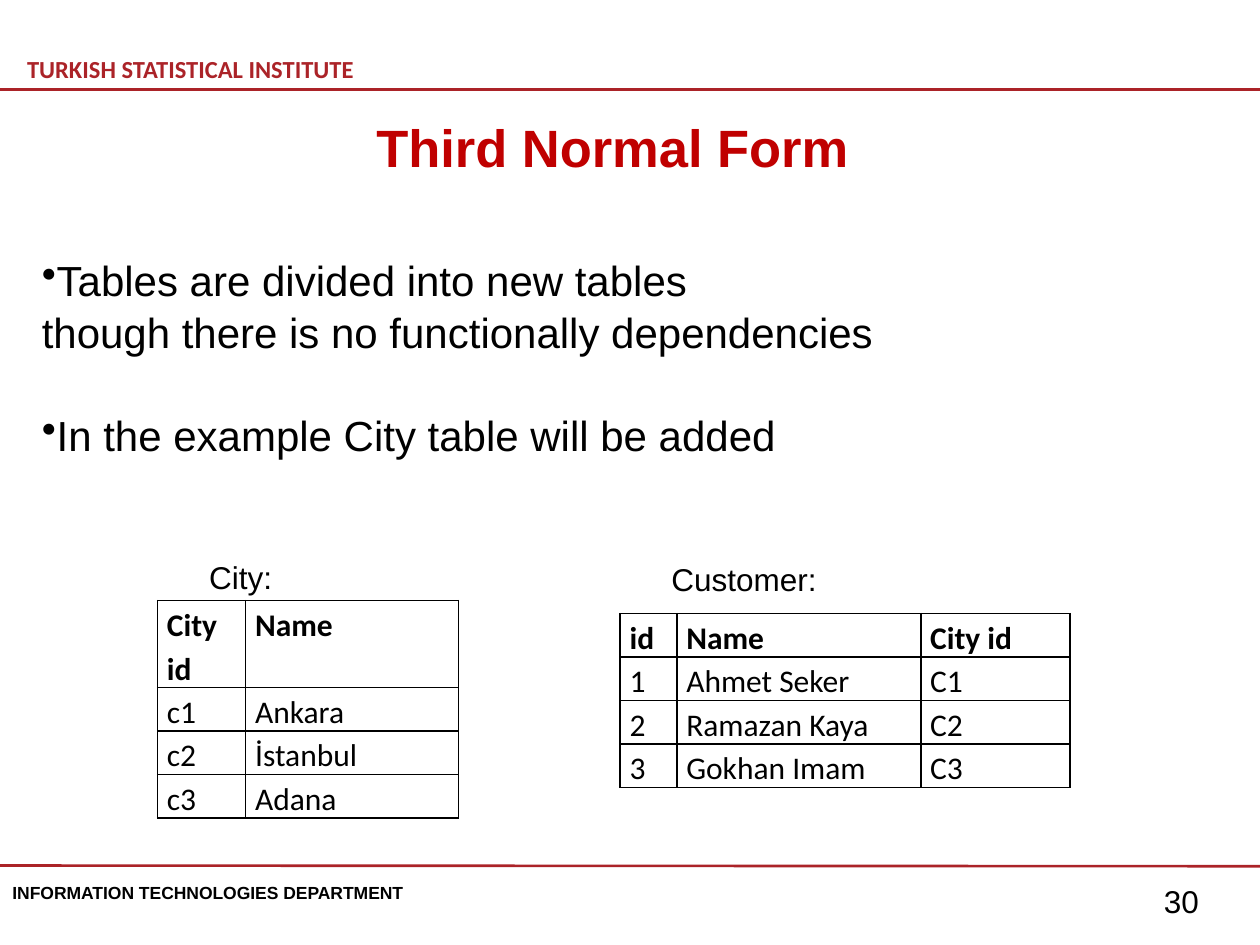
import dataclasses

import pptx
import pptx.dml.color
import pptx.enum.shapes
import pptx.enum.text
import pptx.oxml
import pptx.oxml.ns
import pptx.util

Pt = pptx.util.Pt


@dataclasses.dataclass(frozen=True)
class Theme:
    black: str = "000000"
    header_red: str = "AB2328"
    title_red: str = "C00000"
    body_font: str = "Arial"
    table_font: str = "Calibri"
    title_size: float = 30
    body_size: float = 24
    label_size: float = 18
    header_size: float = 14
    footer_size: float = 10
    rule_width: float = 1.5
    border_width: float = 1
    row_height: float = 24.8


class SlideBuilder:
    """Draw text, rules and tables on one slide in a shared theme."""

    def __init__(self, slide, theme):
        self.slide = slide
        self.theme = theme

    def add_run(self, paragraph, text, size, color=None, font=None, bold=False):
        run = paragraph.add_run()
        run.text = text
        run.font.size = Pt(size)
        run.font.name = font or self.theme.body_font
        run.font.bold = bold
        run.font.color.rgb = pptx.dml.color.RGBColor.from_string(color or self.theme.black)

    def add_frame(self, left, top, width, height, wrap):
        box = self.slide.shapes.add_textbox(Pt(left), Pt(top), Pt(width), Pt(height))
        box.text_frame.word_wrap = wrap
        return box.text_frame

    def add_text(self, position, text, size, top_inset=3.6, **style):
        frame = self.add_frame(*position, wrap=False)
        frame.margin_top = Pt(top_inset)
        self.add_run(frame.paragraphs[0], text, size, **style)

    def add_bullets(self, position, items):
        frame = self.add_frame(*position, wrap=True)
        line_height = 1.04
        paragraph = frame.paragraphs[0]
        for item_index, lines in enumerate(items):
            for line_index, line in enumerate(lines):
                if item_index or line_index:
                    paragraph = frame.add_paragraph()
                if line_index == 0:
                    properties = paragraph._p.get_or_add_pPr()
                    bullet = pptx.oxml.parse_xml(
                        f'<a:buChar {pptx.oxml.ns.nsdecls("a")} char="•"/>')
                    properties.append(bullet)
                    if item_index:
                        paragraph.space_before = Pt(28.7)
                paragraph.line_spacing = line_height
                self.add_run(paragraph, line, self.theme.body_size)

    def add_rule(self, start_y, end_y):
        rule = self.slide.shapes.add_connector(
            pptx.enum.shapes.MSO_CONNECTOR.STRAIGHT, Pt(0), Pt(start_y), Pt(720), Pt(end_y))
        rule.line.width = Pt(self.theme.rule_width)
        rule.line.color.rgb = pptx.dml.color.RGBColor.from_string(self.theme.header_red)
        rule._element.spPr.append(
            pptx.oxml.parse_xml(f'<a:effectLst {pptx.oxml.ns.nsdecls("a")}/>'))

    def add_borders(self, cell):
        properties = cell._tc.get_or_add_tcPr()
        for index, side in enumerate("LRTB"):
            border = pptx.oxml.parse_xml(
                f'<a:ln{side} {pptx.oxml.ns.nsdecls("a")} w="{Pt(self.theme.border_width)}">'
                f'<a:solidFill><a:srgbClr val="{self.theme.black}"/></a:solidFill></a:ln{side}>')
            properties.insert(index, border)

    def add_table(self, left, top, widths, rows, header_lines=1):
        heights = [self.theme.row_height * (header_lines if index == 0 else 1)
                   for index in range(len(rows))]
        table = self.slide.shapes.add_table(
            len(rows), len(widths), Pt(left), Pt(top), Pt(sum(widths)), Pt(sum(heights))).table
        table.first_row = False
        table.horz_banding = False
        for column, width in zip(table.columns, widths):
            column.width = Pt(width)
        for row_index, values in enumerate(rows):
            table.rows[row_index].height = Pt(heights[row_index])
            for column_index, value in enumerate(values):
                cell = table.cell(row_index, column_index)
                cell.margin_left = cell.margin_right = Pt(5.4)
                cell.margin_top = cell.margin_bottom = Pt(0)
                cell.fill.background()
                self.add_borders(cell)
                paragraph = cell.text_frame.paragraphs[0]
                paragraph.line_spacing = 1.15
                self.add_run(paragraph, value, self.theme.label_size,
                             font=self.theme.table_font, bold=row_index == 0)


def main():
    theme = Theme()
    presentation = pptx.Presentation()
    presentation.slide_width = Pt(720)
    presentation.slide_height = Pt(540)
    slide = presentation.slides.add_slide(presentation.slide_layouts[6])
    builder = SlideBuilder(slide, theme)

    builder.add_text((8.4, 13.7, 255, 28), "TURKISH STATISTICAL INSTITUTE", theme.header_size,
                     top_inset=17.3, color=theme.header_red, font=theme.table_font, bold=True)
    builder.add_rule(51, 51)
    builder.add_rule(494.6, 495)
    builder.add_text((0, 500.4, 242, 19.4), "INFORMATION TECHNOLOGIES DEPARTMENT",
                     theme.footer_size, bold=True)
    builder.add_text((658, 500.4, 50, 29), "30", theme.label_size)
    builder.add_text((208, 62, 287, 44), "Third Normal Form", theme.title_size,
                     color=theme.title_red, bold=True)
    builder.add_bullets((16.8, 140.6, 648, 152), [
        ["Tables are divided into new tables", "though there is no functionally dependencies"],
        ["In the example City table will be added"],
    ])
    builder.add_table(90, 343.2, [50.4, 121.6], [
        ["City id", "Name"],
        ["c1", "Ankara"],
        ["c2", "İstanbul"],
        ["c3", "Adana"],
    ], header_lines=2)
    builder.add_table(354.4, 350.6, [32.4, 139.4, 85.4], [
        ["id", "Name", "City id"],
        ["1", "Ahmet Seker", "C1"],
        ["2", "Ramazan Kaya", "C2"],
        ["3", "Gokhan Imam", "C3"],
    ])
    builder.add_text((112.4, 315.2, 51, 29), "City:", theme.label_size)
    builder.add_text((376.6, 316.2, 98.6, 29), "Customer:", theme.label_size)
    presentation.save("out.pptx")


if __name__ == "__main__":
    main()
